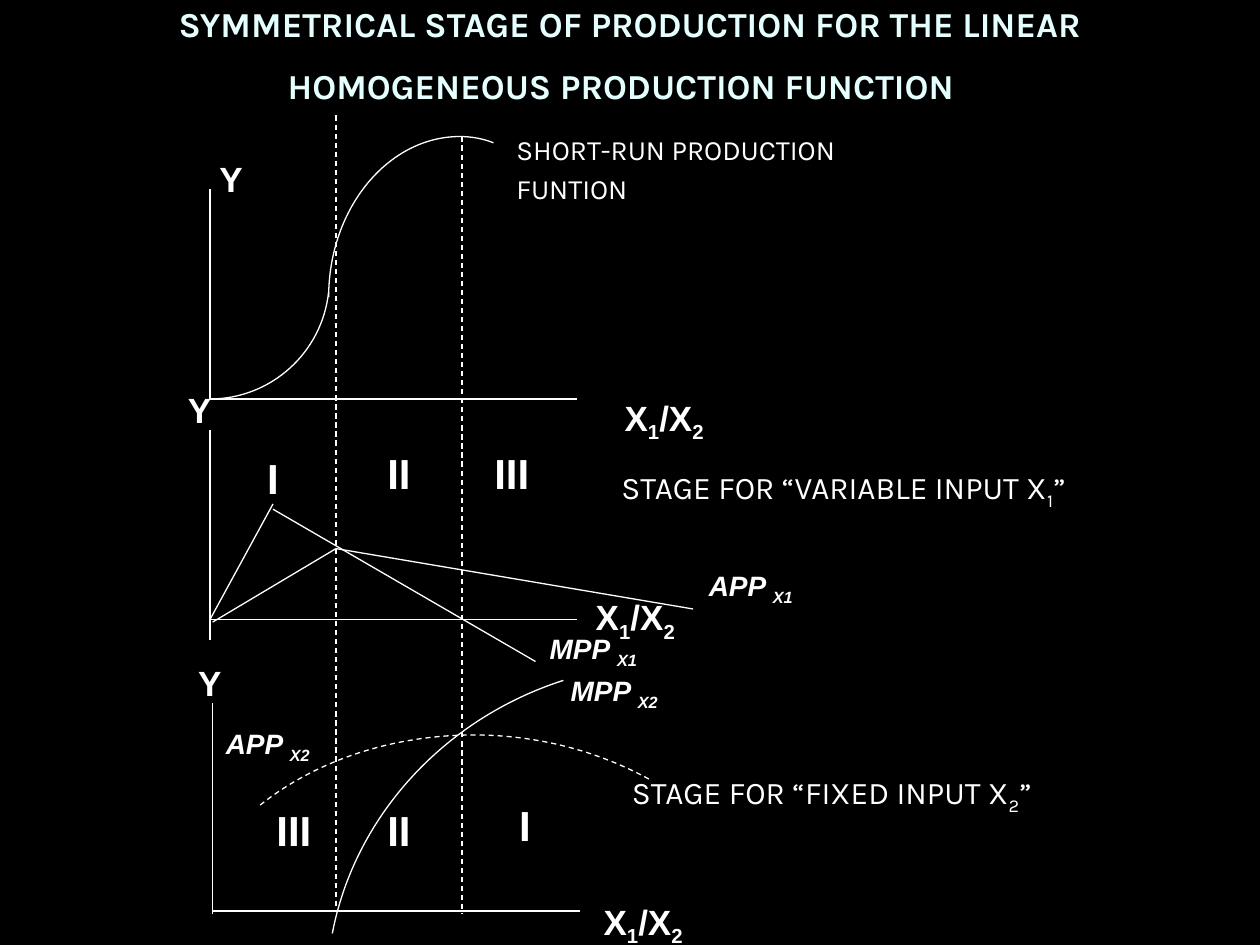
from dataclasses import dataclass

from lxml.etree import SubElement
from pptx import Presentation
from pptx.dml.color import RGBColor as Color
from pptx.enum.dml import MSO_LINE_DASH_STYLE as Dash
from pptx.enum.shapes import MSO_CONNECTOR as Connector
from pptx.enum.text import MSO_ANCHOR as Anchor, PP_ALIGN as Align
from pptx.oxml.ns import qn
from pptx.util import Inches, Pt


@dataclass(frozen=True)
class Theme:
    background: Color = Color(0x00, 0x00, 0x00)
    ink: Color = Color(0xFF, 0xFF, 0xFF)
    title_ink: Color = Color(0xE5, 0xFF, 0xFF)
    label_font: str = "Arial"
    prose_font: str = "Karla"
    title_size: int = 20
    title_end_size: int = 44
    axis_size: int = 20
    stage_size: int = 24
    curve_size: int = 16
    note_size: int = 18
    line_width: float = 0.75


THEME = Theme()
WIDTH, HEIGHT = Inches(10), Inches(7.5)
COLUMNS, ROWS = 120, 90
CELL_WIDTH, CELL_HEIGHT = WIDTH / COLUMNS, HEIGHT / ROWS
RATIO = (("X", False), ("1", True), ("/X", False), ("2", True))


def place(box, point):
    return (round((box[0] + point[0]) * CELL_WIDTH),
            round((box[1] + point[1]) * CELL_HEIGHT))


def add_run(paragraph, text, size, font, color=THEME.ink, bold=False, italic=False, subscript=False):
    run = paragraph.add_run()
    run.text = text
    run.font.size, run.font.name = Pt(size), font
    run.font.bold, run.font.italic = bold, italic
    run.font.color.rgb = color
    if subscript:
        run._r.get_or_add_rPr().set("baseline", "-25000")


def add_frame(slide, box, area, wrap):
    left, top = place(box, area)
    shape = slide.shapes.add_textbox(left, top, round(area[2] * CELL_WIDTH), round(area[3] * CELL_HEIGHT))
    shape.text_frame.word_wrap = wrap
    return shape.text_frame


def add_label(slide, box, area, pieces, size, italic=False):
    frame = add_frame(slide, box, area, False)
    frame.vertical_anchor = Anchor.MIDDLE
    paragraph = frame.paragraphs[0]
    paragraph.alignment = Align.CENTER
    for text, subscript in pieces:
        add_run(paragraph, text, size, THEME.label_font, bold=True, italic=italic, subscript=subscript)


def add_note(slide, box, area, lines, size):
    frame = add_frame(slide, box, area, True)
    for index, pieces in enumerate(lines):
        paragraph = frame.add_paragraph() if index else frame.paragraphs[0]
        paragraph.space_before = Pt(size * 0.2)
        for text, subscript in pieces:
            add_run(paragraph, text, size, THEME.prose_font, subscript=subscript)


def style_line(line, dashed):
    line.color.rgb = THEME.ink
    line.width = Pt(THEME.line_width)
    if dashed:
        line.dash_style = Dash.DASH


def add_line(slide, box, start, end, dashed=False):
    connector = slide.shapes.add_connector(Connector.STRAIGHT, *place(box, start), *place(box, end))
    style_line(connector.line, dashed)
    SubElement(connector._element.spPr, qn("a:effectLst"))


def bend_segments(shape):
    outline = next(shape._element.iter(qn("a:path")))
    segments = outline.findall(qn("a:lnTo"))
    for start in range(0, len(segments), 3):
        curve = SubElement(outline, qn("a:cubicBezTo"))
        for segment in segments[start:start + 3]:
            curve.append(segment[0])
            outline.remove(segment)


def add_curve(slide, box, controls, dashed=False):
    points = [place(box, control) for control in controls]
    builder = slide.shapes.build_freeform(*points[0], scale=1.0)
    builder.add_line_segments(points[1:], close=False)
    shape = builder.convert_to_shape()
    bend_segments(shape)
    shape.shadow.inherit = False
    shape.fill.background()
    style_line(shape.line, dashed)


def add_axes(slide, box, base, y_label, x_label):
    add_line(slide, box, (0, 0), (0, box[3]))
    add_line(slide, box, (0, base), (box[2], base))
    add_label(slide, box, (*y_label, 6, 6), [("Y", False)], THEME.axis_size)
    add_label(slide, box, (*x_label, 15, 6), RATIO, THEME.axis_size)


def add_stages(slide, box, stages):
    for name, column, row, height in stages:
        add_label(slide, box, (column, row, 6, height), [(name, False)], THEME.stage_size)


def add_curve_names(slide, box, names):
    for name, factor, column, row in names:
        add_label(slide, box, (column, row, 15, 4), [(name + " ", False), (factor, True)],
                  THEME.curve_size, italic=True)


def add_title(slide, box):
    frame = add_frame(slide, box, (0, 0, box[2], box[3]), True)
    frame.vertical_anchor = Anchor.MIDDLE
    paragraph = frame.paragraphs[0]
    paragraph.alignment = Align.CENTER
    paragraph.line_spacing = 0.75
    add_run(paragraph, "SYMMETRICAL STAGE OF PRODUCTION FOR THE LINEAR HOMOGENEOUS PRODUCTION FUNCTION",
            THEME.title_size, THEME.prose_font, THEME.title_ink, bold=True)
    add_run(paragraph, " ", THEME.title_end_size, THEME.prose_font, THEME.title_ink)


def add_guides(slide, box):
    add_line(slide, box, (0, 0), (0, box[3] - 0.75), dashed=True)
    add_line(slide, box, (box[2], 2), (box[2], box[3]), dashed=True)


def add_production_panel(slide, box):
    add_axes(slide, box, 20, (-1, -4), (35.75, 19))
    add_curve(slide, box, [(0, 20), (5.8, 20), (10.7, 15.6), (11.3, 9.8)])
    add_curve(slide, box, [(27, -4.4), (26, -4.8), (24.9, -5), (23.8, -5),
                           (17, -5), (11.3, 1.8), (11.3, 10.3)])
    add_note(slide, box, (28, -6, 45, 10),
             [[("SHORT-RUN PRODUCTION", False)], [("FUNTION", False)]], THEME.curve_size)


def add_variable_input_panel(slide, box):
    add_axes(slide, box, 18, (-4, -5), (33, 15))
    for start, end in (((0, 18), (6, 7)), ((6, 7.5), (31, 22)),
                       ((0.25, 18.25), (12, 11.25)), ((12, 11.25), (46, 17))):
        add_line(slide, box, start, end)
    add_stages(slide, box, (("I", 3, 2, 5), ("II", 15, 1, 6), ("III", 25.75, 1, 6)))
    add_curve_names(slide, box, (("APP", "X1", 44, 13), ("MPP", "X1", 29, 19)))
    add_note(slide, box, (38, 3, 48, 7),
             [[("STAGE FOR “VARIABLE INPUT X", False), ("1", True), ("”", False)]], THEME.note_size)


def add_fixed_input_panel(slide, box):
    add_axes(slide, box, 19.75, (-3.25, -5), (33.5, 18))
    add_curve(slide, box, [(41.55, 7.2), (36.6, 4.5), (30.9, 3), (24.9, 3),
                           (17.2, 3), (9.9, 5.4), (4.5, 9.7)], dashed=True)
    add_curve(slide, box, [(33.4, -2.2), (21.9, 1.5), (13.5, 10.9), (11.4, 21.9)])
    add_stages(slide, box, (("III", 4.75, 9, 6), ("II", 14.75, 9, 6), ("I", 26.75, 9, 5)))
    add_curve_names(slide, box, (("APP", "X2", -2.25, 2), ("MPP", "X2", 30.75, -3)))
    add_note(slide, box, (38.75, 6, 45, 6),
             [[("STAGE FOR “FIXED INPUT X", False), ("2", True), ("”", False)]], THEME.note_size)


def main():
    presentation = Presentation()
    presentation.slide_width, presentation.slide_height = WIDTH, HEIGHT
    slide = presentation.slides.add_slide(presentation.slide_layouts[6])
    slide.background.fill.solid()
    slide.background.fill.fore_color.rgb = THEME.background
    add_title(slide, (6, 0, 108, 12))
    add_guides(slide, (32, 11, 12, 76))
    add_production_panel(slide, (20, 18, 35, 20))
    add_variable_input_panel(slide, (20, 41, 35, 20))
    add_fixed_input_panel(slide, (20.25, 67, 35, 20))
    presentation.save("out.pptx")


if __name__ == "__main__":
    main()
